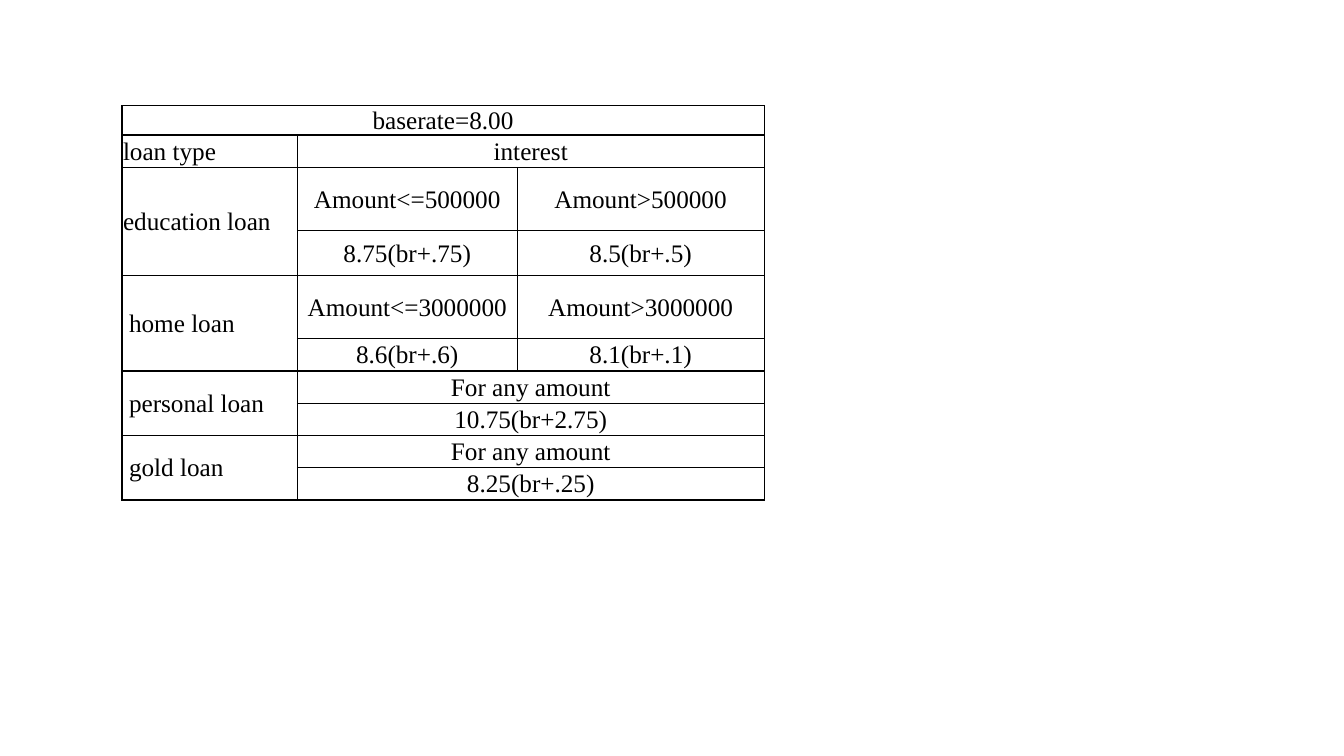
from dataclasses import dataclass

from lxml import etree
from pptx import Presentation
from pptx import util as u
from pptx.dml.color import RGBColor
from pptx.enum import text
from pptx.oxml import ns
from pptx.table import Table, _Cell


@dataclass(frozen=True)
class Theme:
    font: str = "Times New Roman"
    size: int = 18
    ink: str = "000000"
    border: int = 1
    inset: float = 0.01
    indent: float = 0.07


@dataclass(frozen=True)
class Entry:
    row: int
    column: int
    wording: str
    rows: int = 1
    columns: int = 1
    indented: bool = False


@dataclass(frozen=True)
class Loan:
    name: str
    amounts: tuple[str, ...]
    rates: tuple[str, ...]
    indented: bool = True


THEME = Theme()
WIDTH, HEIGHT = u.Inches(13.33), u.Inches(7.5)
LEFT, TOP = 9.08, 14
COLUMN_SHARES = (13.05, 16.35, 18.38)
LINE, TALL = 4.27, 8.4
ROW_SHARES = (3.87, LINE, TALL, 5.87, TALL, LINE, LINE, LINE, LINE, LINE)
HEADINGS = [
    Entry(0, 0, "baserate=8.00", columns=3),
    Entry(1, 0, "loan type"),
    Entry(1, 1, "interest", columns=2),
]
LOANS = (
    Loan("education loan", ("Amount<=500000", "Amount>500000"),
         ("8.75(br+.75)", "8.5(br+.5)"), indented=False),
    Loan("home loan", ("Amount<=3000000", "Amount>3000000"),
         ("8.6(br+.6)", "8.1(br+.1)")),
    Loan("personal loan", ("For any amount",), ("10.75(br+2.75)",)),
    Loan("gold loan", ("For any amount",), ("8.25(br+.25)",)),
)


def across(share: float) -> int:
    return round(WIDTH * share / 100)


def down(share: float) -> int:
    return round(HEIGHT * share / 100)


def loan_entries(loan: Loan, first_row: int) -> list[Entry]:
    entries = [Entry(first_row, 0, loan.name, rows=2, indented=loan.indented)]
    for row, wordings in enumerate((loan.amounts, loan.rates), first_row):
        span = 2 // len(wordings)
        entries += [Entry(row, column, wording, columns=span)
                    for column, wording in enumerate(wordings, 1)]
    return entries


def frame_cell(cell: _Cell) -> None:
    cell.margin_left = cell.margin_right = cell.margin_top = u.Inches(THEME.inset)
    cell.margin_bottom = 0
    cell.vertical_anchor = text.MSO_ANCHOR.MIDDLE
    cell.fill.background()
    properties = cell._tc.get_or_add_tcPr()
    for position, side in enumerate(("lnL", "lnR", "lnT", "lnB")):
        edge = etree.Element(ns.qn(f"a:{side}"), w=str(u.Pt(THEME.border)))
        ink = etree.SubElement(edge, ns.qn("a:solidFill"))
        etree.SubElement(ink, ns.qn("a:srgbClr"), val=THEME.ink)
        properties.insert(position, edge)


def write_entry(rates: Table, entry: Entry) -> None:
    cell = rates.cell(entry.row, entry.column)
    if entry.rows * entry.columns > 1:
        cell.merge(rates.cell(entry.row + entry.rows - 1,
                              entry.column + entry.columns - 1))
    if entry.indented:
        cell.margin_left = u.Inches(THEME.indent)
    paragraph = cell.text_frame.paragraphs[0]
    centred = entry.column > 0 or entry.columns > 1
    paragraph.alignment = text.PP_ALIGN.CENTER if centred else text.PP_ALIGN.LEFT
    run = paragraph.add_run()
    run.text = entry.wording
    run.font.name = THEME.font
    run.font.size = u.Pt(THEME.size)
    run.font.color.rgb = RGBColor.from_string(THEME.ink)


def main() -> None:
    deck = Presentation()
    deck.slide_width, deck.slide_height = WIDTH, HEIGHT
    slide = deck.slides.add_slide(deck.slide_layouts[6])
    rates = slide.shapes.add_table(
        len(ROW_SHARES), len(COLUMN_SHARES), across(LEFT), down(TOP),
        across(sum(COLUMN_SHARES)), down(sum(ROW_SHARES))).table
    rates.first_row = rates.horz_banding = False
    for column, share in zip(rates.columns, COLUMN_SHARES):
        column.width = across(share)
    for row, share in zip(rates.rows, ROW_SHARES):
        row.height = down(share)
    for cell in rates.iter_cells():
        frame_cell(cell)
    entries = list(HEADINGS)
    for index, loan in enumerate(LOANS):
        entries += loan_entries(loan, 2 + 2 * index)
    for entry in entries:
        write_entry(rates, entry)
    deck.save("out.pptx")


if __name__ == "__main__":
    main()
